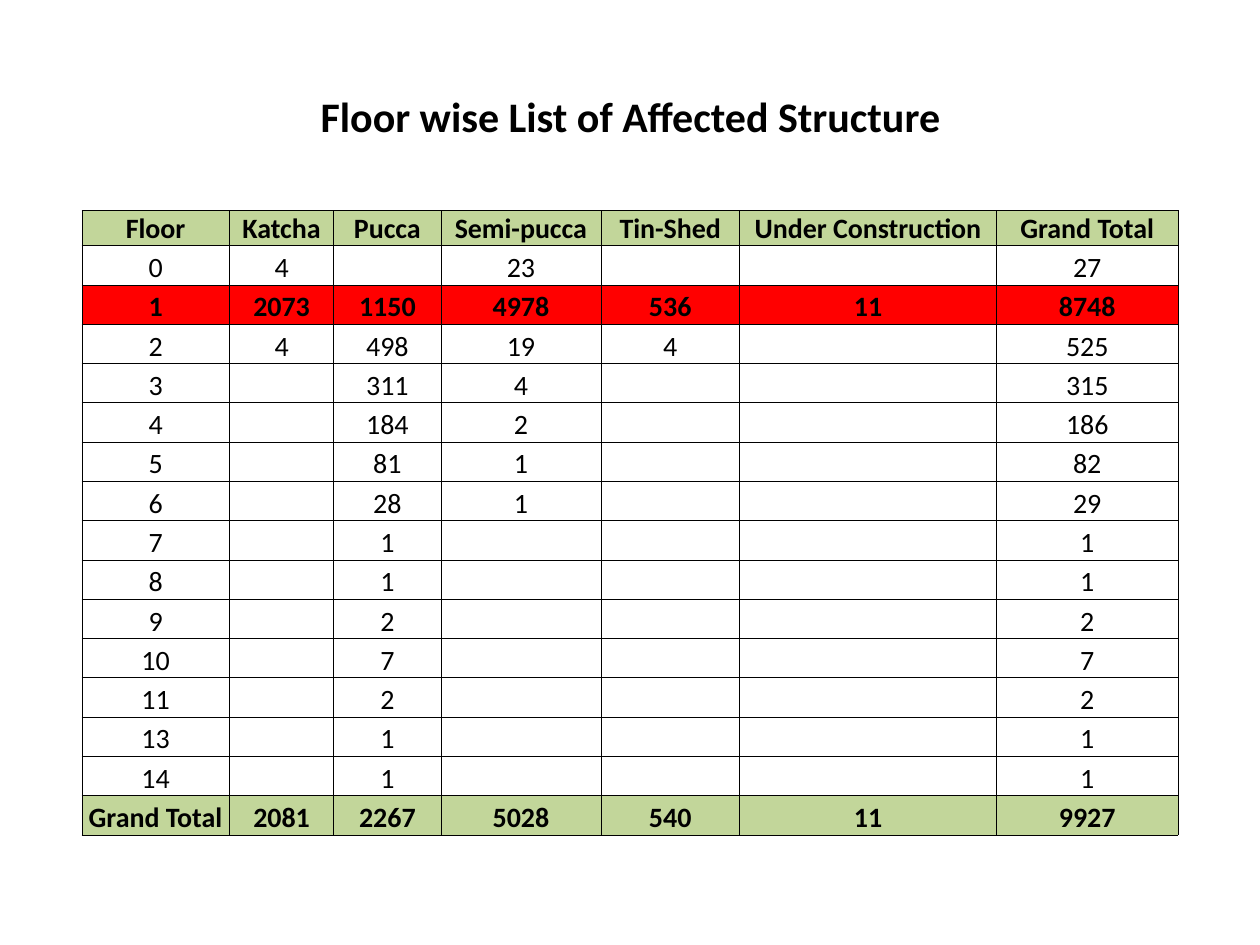
from lxml.etree import SubElement
from pptx import Presentation
from pptx.dml.color import RGBColor
from pptx.enum.text import MSO_ANCHOR, MSO_AUTO_SIZE, PP_ALIGN
from pptx.oxml import parse_xml
from pptx.oxml.ns import nsdecls, qn
from pptx.util import Inches, Pt

COLORS = {"ink": "000000", "green": "C2D69A", "red": "FF0000"}
FONT = "Calibri"

HEADS = ["Floor", "Katcha", "Pucca", "Semi-pucca", "Tin-Shed",
         "Under Construction", "Grand Total"]
ROWS = [
    HEADS,
    [0, 4, "", 23, "", "", 27],
    [1, 2073, 1150, 4978, 536, 11, 8748],
    [2, 4, 498, 19, 4, "", 525],
    [3, "", 311, 4, "", "", 315],
    [4, "", 184, 2, "", "", 186],
    [5, "", 81, 1, "", "", 82],
    [6, "", 28, 1, "", "", 29],
    [7, "", 1, "", "", "", 1],
    [8, "", 1, "", "", "", 1],
    [9, "", 2, "", "", "", 2],
    [10, "", 7, "", "", "", 7],
    [11, "", 2, "", "", "", 2],
    [13, "", 1, "", "", "", 1],
    [14, "", 1, "", "", "", 1],
    ["Grand Total", 2081, 2267, 5028, 540, 11, 9927],
]
WIDTHS = [1.17, 0.83, 0.85, 1.27, 1.1, 2.04, 1.44]
HEIGHT, HEAD = 4.96, 0.28
# Bold rows and their fills: heading, most affected floor, totals
FILLS = {0: "green", 2: "red", len(ROWS) - 1: "green"}


def put_text(frame, text, size=16, bold=False, color="ink"):
    par = frame.paragraphs[0]
    par.alignment = PP_ALIGN.CENTER
    if text == "":
        # An empty cell keeps the text size, so its row does not grow
        SubElement(par._p, qn("a:endParaRPr")).set("sz", str(size * 100))
        return
    run = par.add_run()
    run.text = str(text)
    font = run.font
    font.name, font.size, font.bold = FONT, Pt(size), bold
    font.color.rgb = RGBColor.from_string(COLORS[color])


def add_title(slide, text):
    box = slide.shapes.add_textbox(Inches(2.38), Inches(0.67),
                                   Inches(5.25), Inches(0.5))
    frame = box.text_frame
    frame.word_wrap = True
    frame.auto_size = MSO_AUTO_SIZE.SHAPE_TO_FIT_TEXT
    put_text(frame, text, size=24, bold=True)


def add_edges(cell, width=0.5):
    props = cell._tc.get_or_add_tcPr()
    for side in ("lnL", "lnR", "lnT", "lnB"):
        props.append(parse_xml(
            f'<a:{side} {nsdecls("a")} w="{Pt(width)}"><a:solidFill>'
            f'<a:srgbClr val="{COLORS["ink"]}"/></a:solidFill></a:{side}>'))


def set_cell(cell, text, fill=None):
    cell.margin_left = cell.margin_right = cell.margin_top = Inches(0.01)
    cell.margin_bottom = 0
    cell.vertical_anchor = MSO_ANCHOR.BOTTOM
    add_edges(cell)
    if fill:
        cell.fill.solid()
        cell.fill.fore_color.rgb = RGBColor.from_string(COLORS[fill])
    else:
        cell.fill.background()
    put_text(cell.text_frame, text, bold=fill is not None)


def add_grid(slide):
    table = slide.shapes.add_table(
        len(ROWS), len(HEADS), Inches(0.65), Inches(1.67),
        Inches(sum(WIDTHS)), Inches(HEIGHT)).table
    table.first_row = table.horz_banding = False
    for col, width in zip(table.columns, WIDTHS):
        col.width = Inches(width)
    step = (HEIGHT - HEAD) / (len(ROWS) - 1)
    for r, row in enumerate(ROWS):
        table.rows[r].height = Inches(step if r else HEAD)
        for c, text in enumerate(row):
            set_cell(table.cell(r, c), text, fill=FILLS.get(r))


def main():
    deck = Presentation()
    deck.slide_width, deck.slide_height = Inches(10), Inches(7.5)
    slide = deck.slides.add_slide(deck.slide_layouts[6])
    add_title(slide, "Floor wise List of Affected Structure")
    add_grid(slide)
    deck.save("out.pptx")


if __name__ == "__main__":
    main()
